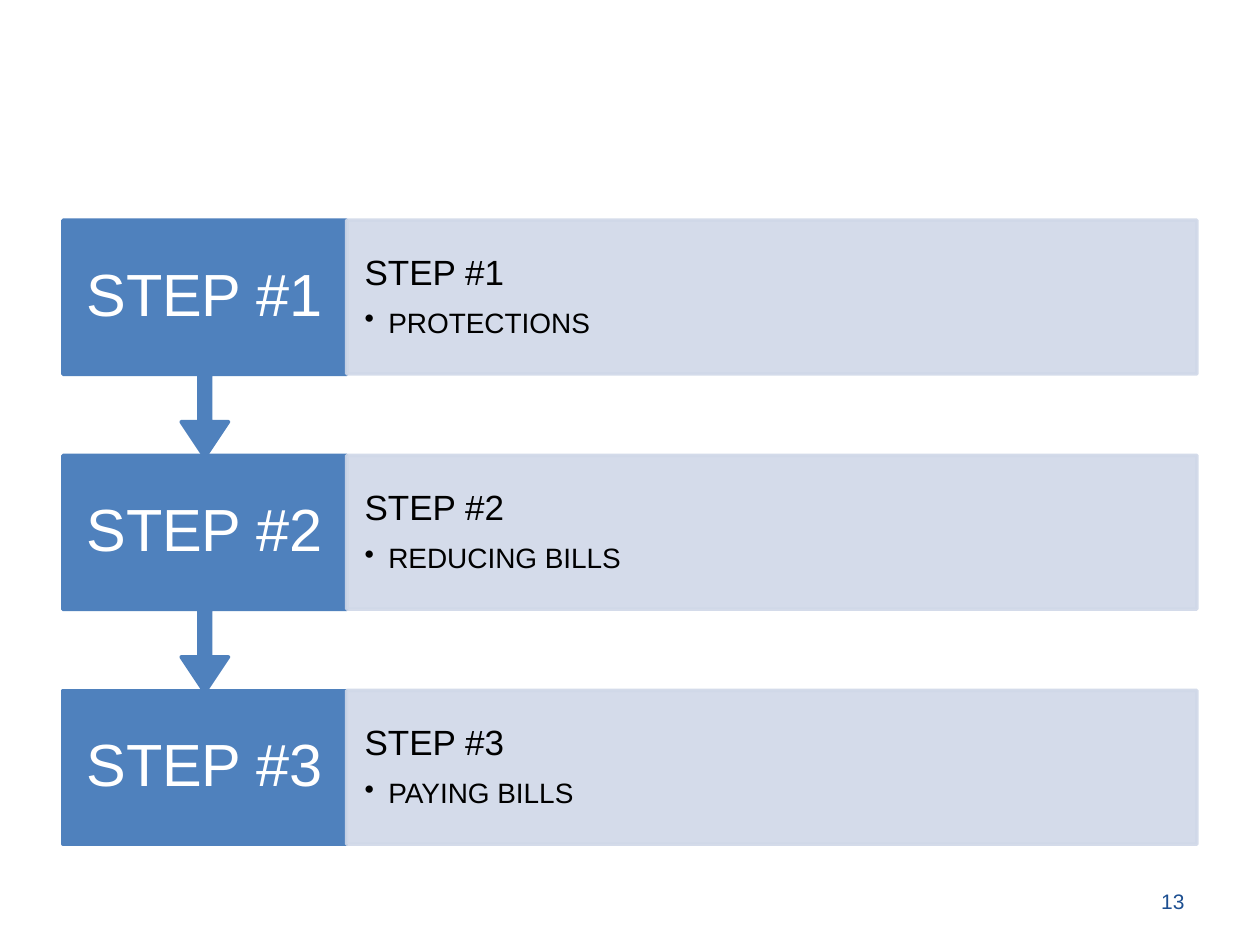
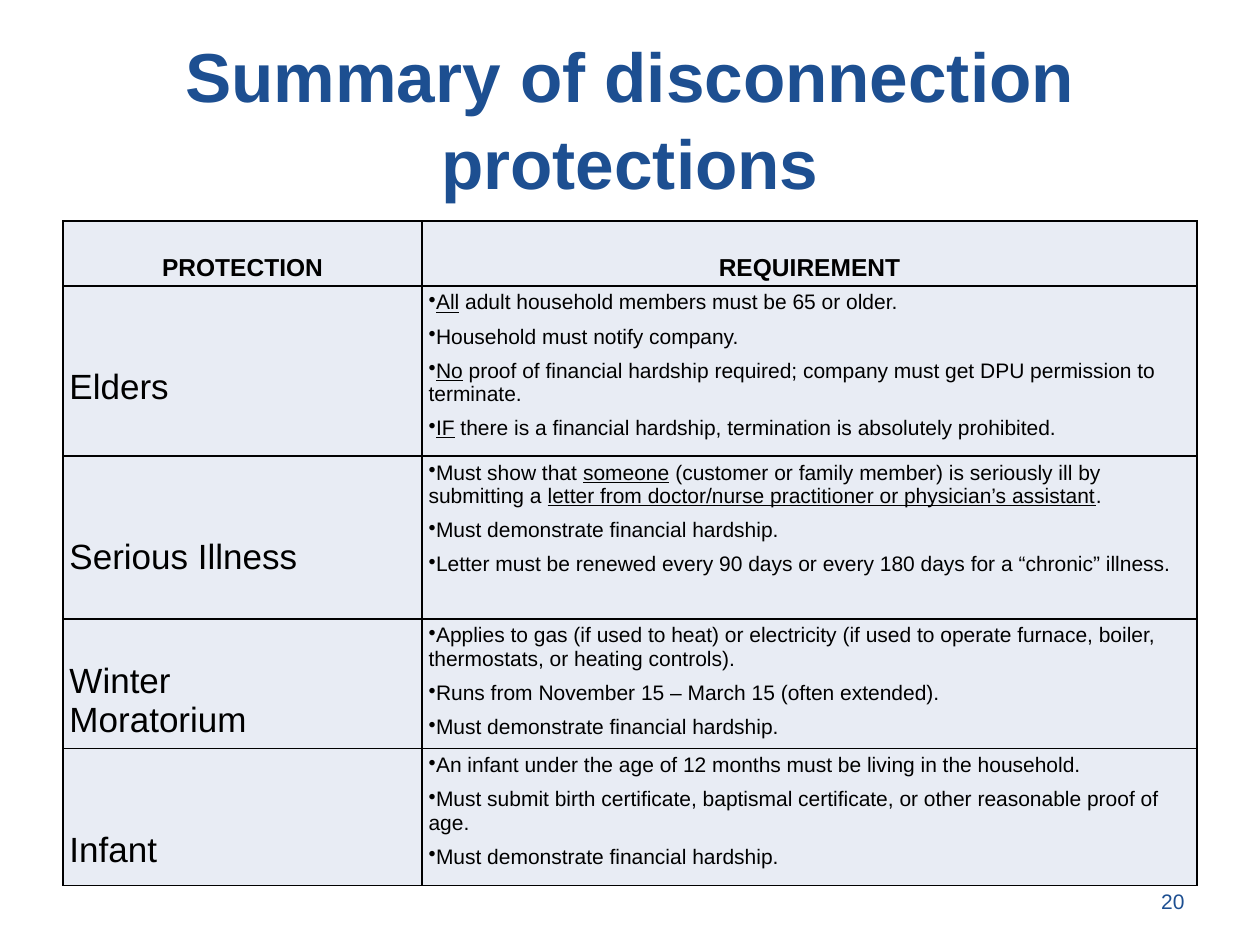
from lxml.etree import SubElement
from pptx import Presentation
from pptx.dml.color import RGBColor
from pptx.enum.shapes import MSO_SHAPE
from pptx.enum.text import MSO_ANCHOR, PP_ALIGN
from pptx.oxml.ns import qn
from pptx.util import Cm, Pt

COLOURS = {
    "navy": "1D4F91",
    "step": "4F81BD",
    "panel": "D0D8E8",
    "cell": "E8ECF4",
    "white": "FFFFFF",
    "black": "000000",
}
LEFT, FULL_WIDTH = 1.27, 22.86
STEP_WIDTH, STEP_HEIGHT, CALLOUT_HEIGHT = 5.72, 3.1, 4.78
STEPS_TOP, STEP_PITCH = 4.44, 4.74
STEPS = ["PROTECTIONS", "REDUCING BILLS", "PAYING BILLS"]

TABLE_TOP = 4.46
COLUMN_WIDTHS = [7.24, 15.62]
HEADINGS = ["PROTECTION", "REQUIREMENT"]
HEADING_HEIGHT, HEADING_DROP = 1.29, 0.66
HARDSHIP = "Must demonstrate financial hardship."
# Protection, row height, space above its name, requirements (_underlined_)
PROTECTIONS = [
    (["Elders"], 3.43, 1.65, [
        "_All_ adult household members must be 65 or older.",
        "Household must notify company.",
        "_No_ proof of financial hardship required; company must get DPU "
        "permission to terminate.",
        "_IF_ there is a financial hardship, termination is absolutely prohibited.",
    ]),
    (["Serious Illness"], 3.28, 1.65, [
        "Must show that _someone_ (customer or family member) is seriously ill by "
        "submitting a _letter from doctor/nurse practitioner or physician’s assistant_.",
        HARDSHIP,
        "Letter must be renewed every 90 days or every 180 days for a “chronic” illness.",
    ]),
    (["Winter", "Moratorium"], 2.54, 0.87, [
        "Applies to gas (if used to heat) or electricity (if used to operate furnace, "
        "boiler, thermostats, or heating controls).",
        "Runs from November 15 – March 15 (often extended).",
        HARDSHIP,
    ]),
    (["Infant"], 2.76, 1.65, [
        "An infant under the age of 12 months must be living in the household.",
        "Must submit birth certificate, baptismal certificate, or other reasonable "
        "proof of age.",
        HARDSHIP,
    ]),
]


def apply(target, **values):
    for name, value in values.items():
        setattr(target, name, value)


class Deck:
    font = "Arial"

    def __init__(self):
        self.presentation = Presentation()
        apply(self.presentation, slide_width=Cm(25.4), slide_height=Cm(19.05))
        self.slide = None

    def add_slide(self, layout, number):
        layouts = self.presentation.slide_layouts
        self.slide = self.presentation.slides.add_slide(layouts.get_by_name(layout))
        page = self.slide.shapes.add_textbox(Cm(18.21), Cm(17.65), Cm(5.92), Cm(1.02))
        apply(page.text_frame, word_wrap=True, vertical_anchor=MSO_ANCHOR.MIDDLE)
        self.add_text(page.text_frame.paragraphs[0], str(number), 12, "navy",
                      alignment=PP_ALIGN.RIGHT)

    def add_text(self, paragraph, text, size, colour="black", bold=False, **layout):
        """Fill a paragraph; parts between underscores are underlined."""
        apply(paragraph, **layout)
        for index, part in enumerate(text.split("_")):
            if part:
                run = paragraph.add_run()
                run.text = part
                apply(run.font, name=self.font, size=Pt(size), bold=bold,
                      underline=index % 2 == 1)
                run.font.color.rgb = RGBColor.from_string(COLOURS[colour])

    def bullet(self, paragraph, indent=0):
        properties = paragraph._p.get_or_add_pPr()
        properties.set("marL", str(Cm(indent)))
        properties.set("indent", str(-Cm(indent)))
        SubElement(properties, qn("a:buChar"), char="•")

    def title(self, text):
        title = self.slide.shapes.title
        apply(title, left=Cm(LEFT), top=Cm(0.76), width=Cm(FULL_WIDTH), height=Cm(3.18))
        apply(title.text_frame, word_wrap=True, vertical_anchor=MSO_ANCHOR.MIDDLE)
        self.add_text(title.text_frame.paragraphs[0], text, 39.6, "navy", bold=True,
                      alignment=PP_ALIGN.CENTER, line_spacing=1.04)

    def block(self, kind, left, top, width, height, colour, opacity=100):
        block = self.slide.shapes.add_shape(kind, Cm(left), Cm(top), Cm(width), Cm(height))
        block.shadow.inherit = False
        block.line.width = Pt(2)
        block.fill.solid()
        for paint in (block.fill.fore_color, block.line.color):
            paint.rgb = RGBColor.from_string(COLOURS[colour])
        if opacity < 100:
            for shade in block._element.spPr.iter(qn("a:srgbClr")):
                SubElement(shade, qn("a:alpha"), val=str(opacity * 1000))
        return block

    def step(self, label, top, leads_on):
        kind = MSO_SHAPE.DOWN_ARROW_CALLOUT if leads_on else MSO_SHAPE.RECTANGLE
        height = CALLOUT_HEIGHT if leads_on else STEP_HEIGHT
        step = self.block(kind, LEFT, top, STEP_WIDTH, height, "step")
        if leads_on:
            for index, value in enumerate([0.05, 0.1, 0.15, 0.65]):
                step.adjustments[index] = value
        apply(step.text_frame, word_wrap=True, vertical_anchor=MSO_ANCHOR.MIDDLE,
              margin_left=Cm(0.3), margin_right=Cm(0.3))
        self.add_text(step.text_frame.paragraphs[0], label, 34, "white",
                      alignment=PP_ALIGN.CENTER, line_spacing=0.9)

    def detail(self, label, content, top):
        detail = self.block(MSO_SHAPE.RECTANGLE, LEFT + STEP_WIDTH, top,
                            FULL_WIDTH - STEP_WIDTH, STEP_HEIGHT, "panel", opacity=90)
        frame = detail.text_frame
        apply(frame, word_wrap=True, vertical_anchor=MSO_ANCHOR.TOP,
              margin_left=Cm(0.36), margin_right=Cm(0.36),
              margin_top=Cm(0.71), margin_bottom=Cm(0.71))
        spacing = {"alignment": PP_ALIGN.LEFT, "line_spacing": 0.9}
        self.add_text(frame.paragraphs[0], label, 20, space_after=Pt(9), **spacing)
        item = frame.add_paragraph()
        self.add_text(item, content, 16, **spacing)
        self.bullet(item, 0.48)

    def cell(self, cell, lines, size, drop=0.1, bulleted=False, bold=False,
             alignment=PP_ALIGN.LEFT):
        apply(cell, margin_left=Cm(0.13), margin_right=Cm(0.13),
              margin_top=Cm(drop), margin_bottom=Cm(0.05))
        properties = cell._tc.get_or_add_tcPr()
        for side in ("lnL", "lnR", "lnT", "lnB"):
            border = SubElement(properties, qn(f"a:{side}"), w=str(Pt(1)))
            paint = SubElement(border, qn("a:solidFill"))
            SubElement(paint, qn("a:srgbClr"), val=COLOURS["black"])
        cell.fill.solid()
        cell.fill.fore_color.rgb = RGBColor.from_string(COLOURS["cell"])
        for index, line in enumerate(lines):
            frame = cell.text_frame
            paragraph = frame.add_paragraph() if index else frame.paragraphs[0]
            gap = Pt(6) if bulleted and index else Pt(0)
            self.add_text(paragraph, line, size, bold=bold, alignment=alignment,
                          space_before=gap)
            if bulleted:
                self.bullet(paragraph)

    def protection_table(self):
        heights = [HEADING_HEIGHT] + [height for _, height, _, _ in PROTECTIONS]
        table = self.slide.shapes.add_table(
            len(heights), len(COLUMN_WIDTHS), Cm(LEFT), Cm(TABLE_TOP),
            Cm(FULL_WIDTH), Cm(sum(heights))).table
        apply(table, first_row=False, horz_banding=False)
        for column, width in zip(table.columns, COLUMN_WIDTHS):
            column.width = Cm(width)
        for row, height in zip(table.rows, heights):
            row.height = Cm(height)
        for column, heading in enumerate(HEADINGS):
            self.cell(table.cell(0, column), [heading], 14, HEADING_DROP, bold=True,
                      alignment=PP_ALIGN.CENTER)
        for row, (name, _, drop, requirements) in enumerate(PROTECTIONS, 1):
            self.cell(table.cell(row, 0), name, 20, drop)
            self.cell(table.cell(row, 1), requirements, 12, bulleted=True)


def main():
    deck = Deck()

    deck.add_slide("Blank", 13)
    for index, content in reversed(list(enumerate(STEPS))):
        label = f"STEP #{index + 1}"
        top = STEPS_TOP + index * STEP_PITCH
        deck.step(label, top, leads_on=index < len(STEPS) - 1)
        deck.detail(label, content, top)

    deck.add_slide("Title Only", 20)
    deck.title("Summary of disconnection protections")
    deck.protection_table()

    deck.presentation.save("out.pptx")


if __name__ == "__main__":
    main()
